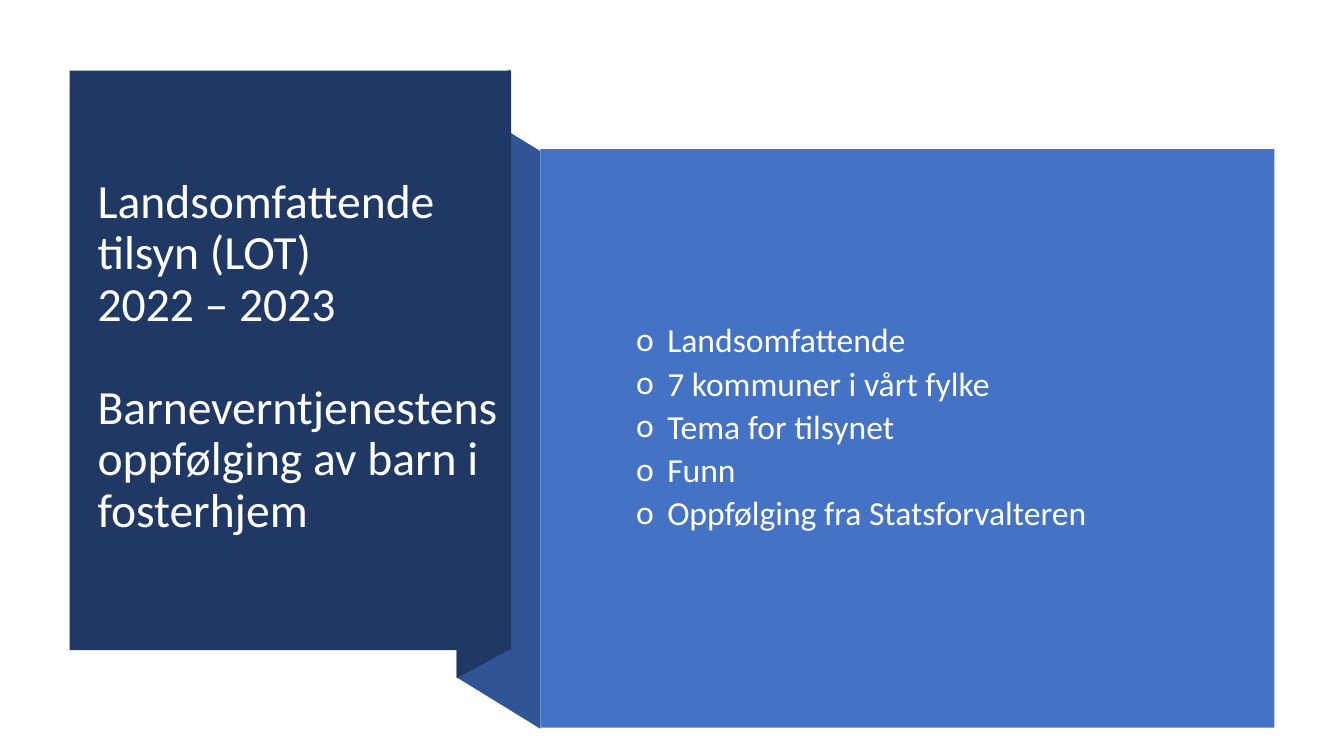
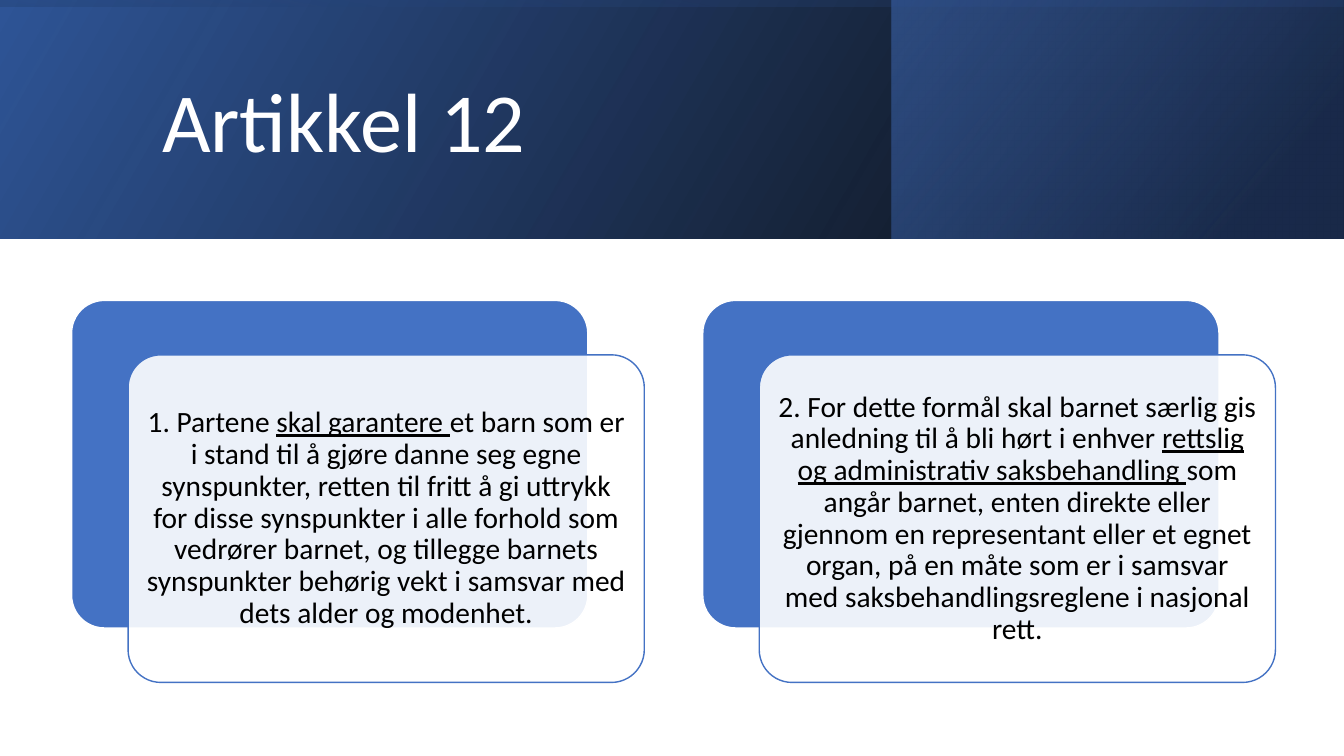
"""Build two slides on child welfare supervision and Article 12."""
from dataclasses import dataclass

from lxml import etree
from pptx import Presentation
from pptx.dml.color import RGBColor
from pptx.enum.shapes import MSO_SHAPE
from pptx.enum.text import MSO_ANCHOR, PP_ALIGN
from pptx.oxml.ns import qn
from pptx.shapes.autoshape import Shape
from pptx.slide import Slide
from pptx.text.text import TextFrame
from pptx.util import Inches, Pt

RECTANGLE = MSO_SHAPE.RECTANGLE
ROUNDED = MSO_SHAPE.ROUNDED_RECTANGLE
MIDDLE = MSO_ANCHOR.MIDDLE
CENTER = PP_ALIGN.CENTER

WHITE = RGBColor(0xFF, 0xFF, 0xFF)
BLACK = RGBColor(0x00, 0x00, 0x00)
NAVY = RGBColor(0x20, 0x38, 0x64)
DEEP_BLUE = RGBColor(0x2F, 0x55, 0x97)
BLUE = RGBColor(0x44, 0x72, 0xC4)

FONT = "Calibri"
LINE_SPACING = 0.9
SLIDE_WIDTH, SLIDE_HEIGHT = 13.33, 7.5
BAND_HEIGHT = 2.37
CARD_WIDTH, CARD_HEIGHT = 5.12, 3.25
CARD_LEFT, CARD_TOP, CARD_PITCH = 0.71, 2.98, 6.26
CARD_SHIFT_X, CARD_SHIFT_Y = 0.56, 0.54


@dataclass(frozen=True)
class Box:
    left: float
    top: float
    width: float
    height: float

    def lengths(self) -> tuple:
        return tuple(Inches(v) for v in (self.left, self.top, self.width, self.height))


@dataclass(frozen=True)
class Stop:
    position: float
    color: RGBColor
    alpha: int


@dataclass(frozen=True)
class Band:
    box: Box
    angle: int
    stops: tuple[Stop, Stop]
    rotation: int = 0


@dataclass(frozen=True)
class Article:
    opening: str
    underlined: str
    closing: str


FOLDS = (
    (DEEP_BLUE, ((5.36, 7.23), (4.53, 6.72), (4.53, 0.99), (5.36, 1.5))),
    (NAVY, ((5.06, 6.44), (4.53, 6.73), (4.53, 0.98), (5.06, 0.69))),
)
TITLE_PARTS = (
    "Landsomfattende tilsyn (LOT)\v2022 – 2023",
    "Barneverntjenestens oppfølging av barn i fosterhjem",
)
TOPICS = (
    "Landsomfattende",
    "7 kommuner i vårt fylke",
    "Tema for tilsynet",
    "Funn",
    "Oppfølging fra Statsforvalteren",
)
BANDS = (
    Band(Box(0, 0, SLIDE_WIDTH, BAND_HEIGHT), 330,
         (Stop(0, BLACK, 96), Stop(1, DEEP_BLUE, 100))),
    Band(Box(8.84, 0, 4.48, BAND_HEIGHT), 320,
         (Stop(0.19, NAVY, 68), Stop(1, BLUE, 48))),
    Band(Box(5.48, -5.48, BAND_HEIGHT, SLIDE_WIDTH), 350,
         (Stop(0.23, DEEP_BLUE, 16), Stop(0.99, BLACK, 45)), 270),
)
ARTICLES = (
    Article(
        "1. Partene ",
        "skal garantere ",
        "et barn som er i stand til å gjøre danne seg egne synspunkter, retten til "
        "fritt å gi uttrykk for disse synspunkter i alle forhold som vedrører barnet, "
        "og tillegge barnets synspunkter behørig vekt i samsvar med dets alder og "
        "modenhet.",
    ),
    Article(
        "2. For dette formål skal barnet særlig gis anledning til å bli hørt i enhver ",
        "rettslig og administrativ saksbehandling ",
        "som angår barnet, enten direkte eller gjennom en representant eller et egnet "
        "organ, på en måte som er i samsvar med saksbehandlingsreglene i nasjonal rett.",
    ),
)


def set_alphas(shape: Shape, *alphas: int) -> None:
    for color, alpha in zip(shape.element.spPr.iter(qn("a:srgbClr")), alphas):
        etree.SubElement(color, qn("a:alpha")).set("val", str(alpha * 1000))


def paint(shape: Shape, fill: RGBColor, line: RGBColor | None = None) -> None:
    shape.shadow.inherit = False
    shape.fill.solid()
    shape.fill.fore_color.rgb = fill
    if line is None:
        shape.line.fill.background()
    else:
        shape.line.color.rgb = line
        shape.line.width = Pt(1)


def add_block(slide: Slide, kind: MSO_SHAPE, box: Box, fill: RGBColor,
              line: RGBColor | None = None) -> Shape:
    shape = slide.shapes.add_shape(kind, *box.lengths())
    paint(shape, fill, line)
    return shape


def add_fold(slide: Slide, color: RGBColor, points: tuple) -> None:
    corners = [(Inches(x), Inches(y)) for x, y in points]
    builder = slide.shapes.build_freeform(*corners[0])
    builder.add_line_segments(corners[1:], close=True)
    paint(builder.convert_to_shape(), color)


def style_text(text_frame: TextFrame, size: float, color: RGBColor) -> None:
    text_frame.word_wrap = True
    text_frame.vertical_anchor = MIDDLE
    for paragraph in text_frame.paragraphs:
        paragraph.line_spacing = LINE_SPACING
        for run in paragraph.runs:
            run.font.name = FONT
            run.font.size = Pt(size)
            run.font.color.rgb = color


def add_text(slide: Slide, box: Box, lines: tuple[str, ...], size: float,
             gap: float = 0) -> TextFrame:
    text_frame = slide.shapes.add_textbox(*box.lengths()).text_frame
    text_frame.text = "\n".join(lines)
    style_text(text_frame, size, WHITE)
    for paragraph in text_frame.paragraphs[1:]:
        paragraph.space_before = Pt(gap)
    return text_frame


def add_bullets(text_frame: TextFrame) -> None:
    for paragraph in text_frame.paragraphs:
        properties = paragraph._p.get_or_add_pPr()
        properties.set("marL", str(Inches(0.81)))
        properties.set("indent", str(Inches(-0.31)))
        etree.SubElement(properties, qn("a:buFont")).set("typeface", FONT)
        etree.SubElement(properties, qn("a:buChar")).set("char", "o")


def add_band(slide: Slide, band: Band) -> None:
    shape = add_block(slide, RECTANGLE, band.box, NAVY)
    shape.rotation = band.rotation
    shape.element.spPr.find(qn("a:xfrm")).set("flipH", "1")
    shape.fill.gradient()
    shape.fill.gradient_angle = 360 - band.angle
    for gradient_stop, stop in zip(shape.fill.gradient_stops, band.stops):
        gradient_stop.position = stop.position
        gradient_stop.color.rgb = stop.color
    set_alphas(shape, *(stop.alpha for stop in band.stops))


def add_card(slide: Slide, left: float, article: Article) -> None:
    back = add_block(slide, ROUNDED, Box(left, CARD_TOP, CARD_WIDTH, CARD_HEIGHT),
                     BLUE, WHITE)
    front_box = Box(left + CARD_SHIFT_X, CARD_TOP + CARD_SHIFT_Y,
                    CARD_WIDTH, CARD_HEIGHT)
    front = add_block(slide, ROUNDED, front_box, WHITE, BLUE)
    set_alphas(front, 90)
    for shape in (back, front):
        shape.adjustments[0] = 0.1
    text_frame = front.text_frame
    text_frame.margin_left = text_frame.margin_right = Inches(0.09)
    text_frame.margin_top = text_frame.margin_bottom = Inches(0.09)
    paragraph = text_frame.paragraphs[0]
    paragraph.alignment = CENTER
    for text in (article.opening, article.underlined, article.closing):
        run = paragraph.add_run()
        run.text = text
        run.font.underline = text == article.underlined
    style_text(text_frame, 21, BLACK)


def build_supervision(slide: Slide) -> None:
    for color, points in FOLDS:
        add_fold(slide, color, points)
    add_block(slide, RECTANGLE, Box(0.69, 0.7, 4.38, 5.75), NAVY)
    add_text(slide, Box(0.87, 1.05, 4.37, 4.99), TITLE_PARTS, 34, gap=37)
    add_block(slide, RECTANGLE, Box(5.36, 1.48, 7.28, 5.74), BLUE)
    add_bullets(add_text(slide, Box(5.71, 1.88, 6.51, 4.74), TOPICS, 24, gap=5))


def build_article(slide: Slide) -> None:
    for band in BANDS:
        add_band(slide, band)
    add_text(slide, Box(1.51, 0.38, 10.63, 1.72), ("Artikkel 12",), 60)
    for index, article in enumerate(ARTICLES):
        add_card(slide, CARD_LEFT + index * CARD_PITCH, article)


def main() -> None:
    presentation = Presentation()
    presentation.slide_width = Inches(SLIDE_WIDTH)
    presentation.slide_height = Inches(SLIDE_HEIGHT)
    blank = presentation.slide_layouts[6]
    for build in (build_supervision, build_article):
        build(presentation.slides.add_slide(blank))
    presentation.save("out.pptx")


if __name__ == "__main__":
    main()
